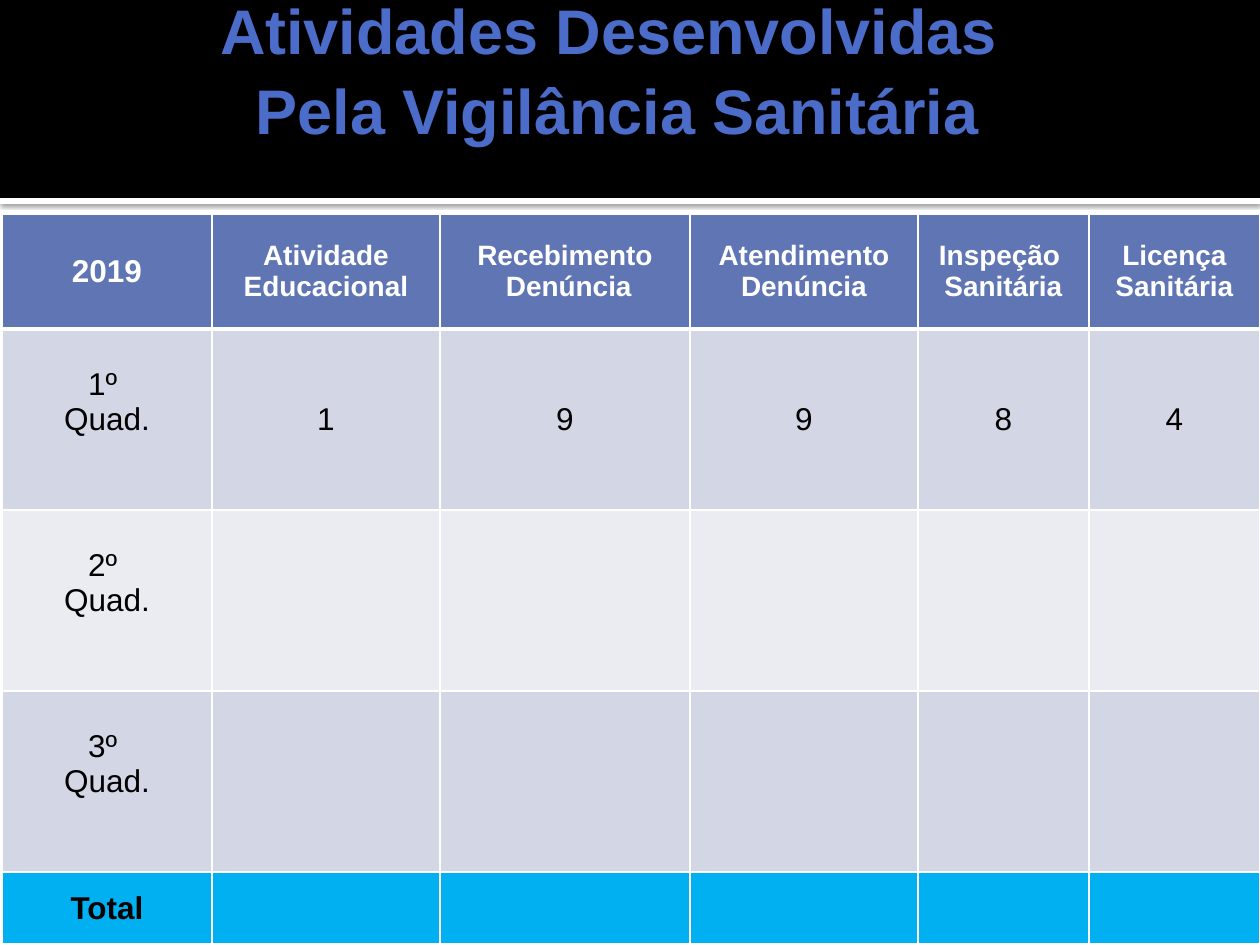
"""Build the slide on health surveillance activities by four-month period."""
from dataclasses import dataclass

from lxml import etree
from pptx import Presentation
from pptx import util as u
from pptx.dml.color import RGBColor
from pptx.enum import shapes, text
from pptx.oxml.ns import qn

EMU_PER_PX = 914400 / 126
SLIDE_WIDTH, SLIDE_HEIGHT = 1260, 945
FONT = "Arial"

WHITE = RGBColor(0xFF, 0xFF, 0xFF)
BLACK = RGBColor(0x00, 0x00, 0x00)
TITLE_BLUE = RGBColor(0x4B, 0x6C, 0xC9)
HEADER_BLUE = RGBColor(0x60, 0x76, 0xB4)
BAND_DARK = RGBColor(0xD2, 0xD6, 0xE5)
BAND_LIGHT = RGBColor(0xEA, 0xEC, 0xF2)
TOTAL_BLUE = RGBColor(0x00, 0xB0, 0xF0)

COLUMN_WIDTHS = (210, 228, 250, 228, 171, 171)
HEADER_SIZES = (18, 16, 16, 16, 16, 16)
BODY_SIZES = (18,) * len(COLUMN_WIDTHS)


@dataclass(frozen=True)
class Band:
    top: int
    height: int
    fill: RGBColor
    shadowed: bool = False


@dataclass(frozen=True)
class Row:
    texts: tuple[str, ...]
    height: int
    fill: RGBColor
    color: RGBColor = BLACK
    bold: bool = False
    sizes: tuple[int, ...] = BODY_SIZES
    top_line: int = 1
    bottom_line: int = 1
    label_lift: int = 0


BANDS = (
    Band(198, 6, WHITE, shadowed=True),
    Band(0, 198, BLACK),
)

ROWS = (
    Row(("2019", "Atividade Educacional", "Recebimento\n Denúncia",
         "Atendimento Denúncia", "Inspeção \nSanitária", "Licença Sanitária"),
        115, HEADER_BLUE, WHITE, bold=True, sizes=HEADER_SIZES, bottom_line=3),
    Row(("1º \nQuad.", "1", "9", "9", "8", "4"), 181, BAND_DARK, top_line=3, label_lift=35),
    Row(("2º \nQuad.",), 181, BAND_LIGHT, label_lift=35),
    Row(("3º \nQuad.",), 181, BAND_DARK, label_lift=35),
    Row(("Total",), 72, TOTAL_BLUE, bold=True),
)


def px(length: int) -> u.Emu:
    """Turn pixels into EMU."""
    return u.Emu(round(length * EMU_PER_PX))


def style_text(frame, size: int, color: RGBColor, bold: bool) -> None:
    """Centre every paragraph and format its runs."""
    for paragraph in frame.paragraphs:
        paragraph.alignment = text.PP_ALIGN.CENTER
        for run in paragraph.runs:
            run.font.name = FONT
            run.font.size = u.Pt(size)
            run.font.bold = bold
            run.font.color.rgb = color


def add_shadow(shape) -> None:
    """Give a shape a soft black shadow below it."""
    effects = shape._element.spPr.find(qn("a:effectLst"))
    shadow = etree.SubElement(
        effects, qn("a:outerShdw"), blurRad=str(u.Pt(2.5)), dist=str(u.Pt(0.8)),
        dir="5400000", algn="tl", rotWithShape="0")
    color = etree.SubElement(shadow, qn("a:srgbClr"), val=str(BLACK))
    etree.SubElement(color, qn("a:alpha"), val="60000")


def add_band(slide, band: Band) -> None:
    """Draw a full-width band."""
    strip = slide.shapes.add_shape(
        shapes.MSO_SHAPE.RECTANGLE, 0, px(band.top), px(SLIDE_WIDTH), px(band.height))
    strip.fill.solid()
    strip.fill.fore_color.rgb = band.fill
    strip.line.fill.background()
    strip.shadow.inherit = False
    if band.shadowed:
        add_shadow(strip)


def add_title(slide) -> None:
    """Write the two-line heading."""
    frame = slide.shapes.add_textbox(px(47), px(-19), px(1134), px(173)).text_frame
    frame.word_wrap = True
    frame.vertical_anchor = text.MSO_ANCHOR.MIDDLE
    frame.margin_left = px(13)
    frame.margin_right = frame.margin_top = frame.margin_bottom = px(6)
    frame.text = "Atividades Desenvolvidas \vPela Vigilância Sanitária"
    frame.paragraphs[0].line_spacing = 1.05
    style_text(frame, 36, TITLE_BLUE, bold=True)


def add_borders(cell, row: Row) -> None:
    """Put white lines on the four sides of a cell."""
    properties = cell._tc.get_or_add_tcPr()
    widths = {"a:lnL": 1, "a:lnR": 1, "a:lnT": row.top_line, "a:lnB": row.bottom_line}
    for position, (side, width) in enumerate(widths.items()):
        line = etree.Element(qn(side), w=str(u.Pt(width)))
        fill = etree.SubElement(line, qn("a:solidFill"))
        etree.SubElement(fill, qn("a:srgbClr"), val=str(WHITE))
        properties.insert(position, line)


def add_activity_table(slide) -> None:
    """Draw the table of activities, one row per period."""
    table = slide.shapes.add_table(
        len(ROWS), len(COLUMN_WIDTHS), px(2), px(214),
        px(sum(COLUMN_WIDTHS)), px(sum(row.height for row in ROWS))).table
    for column, width in zip(table.columns, COLUMN_WIDTHS):
        column.width = px(width)
    for table_row, row in zip(table.rows, ROWS):
        table_row.height = px(row.height)
        for cell in table_row.cells:
            cell.fill.solid()
            cell.fill.fore_color.rgb = row.fill
            cell.vertical_anchor = text.MSO_ANCHOR.MIDDLE
            add_borders(cell, row)
        for cell, wording, size in zip(table_row.cells, row.texts, row.sizes):
            cell.text_frame.text = wording
            style_text(cell.text_frame, size, row.color, row.bold)
        table_row.cells[0].margin_bottom = px(6 + row.label_lift)


def main() -> None:
    """Build and save the slide."""
    deck = Presentation()
    deck.slide_width, deck.slide_height = px(SLIDE_WIDTH), px(SLIDE_HEIGHT)
    slide = deck.slides.add_slide(deck.slide_layouts[6])
    for band in BANDS:
        add_band(slide, band)
    add_title(slide)
    add_activity_table(slide)
    deck.save("out.pptx")


if __name__ == "__main__":
    main()
